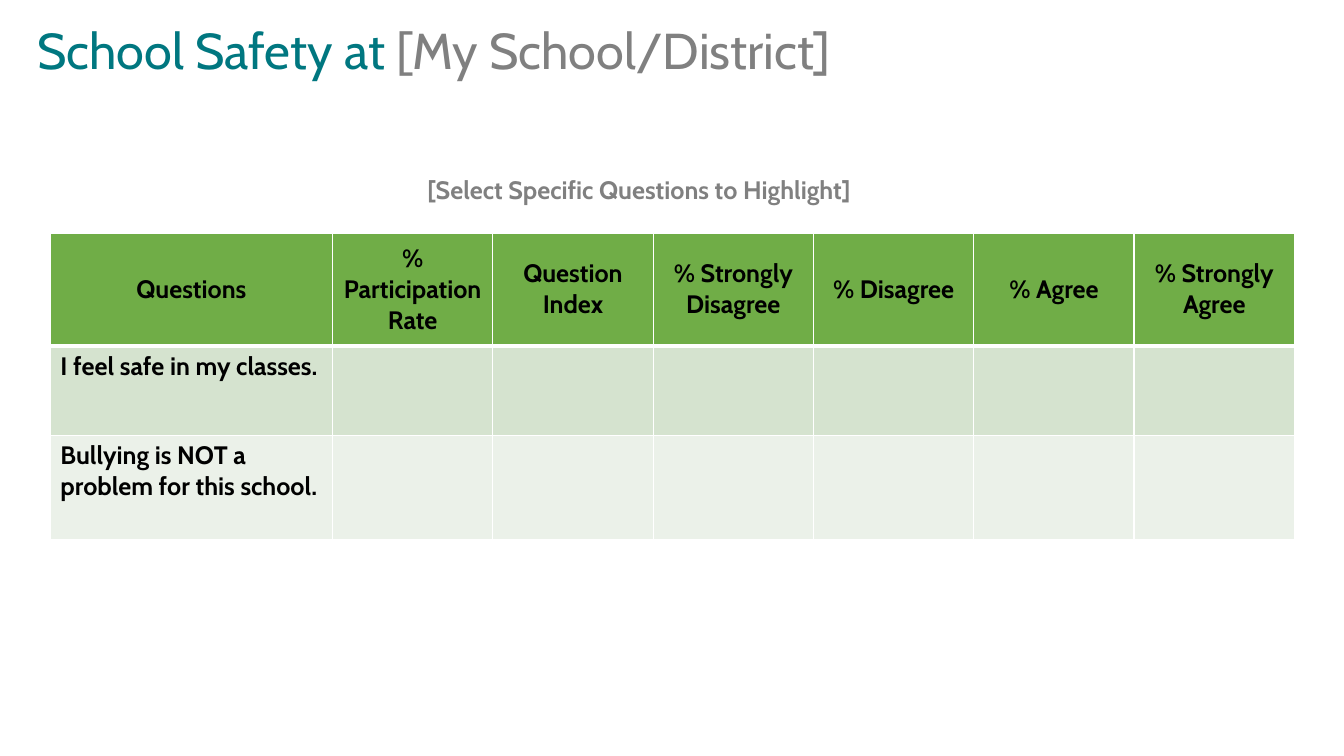
from lxml.etree import SubElement
from pptx import Presentation
from pptx.dml.color import RGBColor
from pptx.enum.text import MSO_ANCHOR, PP_ALIGN
from pptx.oxml.ns import qn
from pptx.util import Cm, Pt

COLORS = {
    "teal": "007780",
    "gray": "808080",
    "black": "000000",
    "white": "FFFFFF",
    "header": "70AD47",
    "band_dark": "D5E3CF",
    "band_light": "EBF1E9",
}
TITLE_FONT = {"name": "Cabin", "size": Pt(36)}
BOLD_FONT = {"name": "Cabin", "size": Pt(18), "bold": True}

HEADINGS = [
    "Questions", "% Participation Rate", "Question Index", "% Strongly Disagree",
    "% Disagree", "% Agree", "% Strongly Agree",
]
QUESTIONS = ["I feel safe in my classes.", "Bullying is NOT a problem for this school."]
ROW_HEIGHTS = [2.84, 2.26, 2.62]
ROW_FILLS = ["header", "band_dark", "band_light"]
QUESTION_WIDTH, RESULT_WIDTH = 7.11, 4.04


def set_attributes(target, values):
    for name, value in values.items():
        setattr(target, name, value)


def add_run(paragraph, text, font_values, color):
    run = paragraph.add_run()
    run.text = text
    set_attributes(run.font, font_values)
    run.font.color.rgb = RGBColor.from_string(COLORS[color])


def add_text(slide, box, parts, font_values, frame_values, line_spacing=1.0):
    """Add a one-paragraph text box; parts are (text, color) pairs."""
    shape = slide.shapes.add_textbox(*(Cm(length) for length in box))
    set_attributes(shape.text_frame, {"word_wrap": True, **frame_values})
    paragraph = shape.text_frame.paragraphs[0]
    paragraph.line_spacing = line_spacing
    for text, color in parts:
        add_run(paragraph, text, font_values, color)


def set_borders(cell, widths):
    """Draw white borders; widths maps left, right, top and bottom to points."""
    properties = cell._tc.get_or_add_tcPr()
    for side in "LRTB":
        line = SubElement(properties, qn(f"a:ln{side}"), w=str(Pt(widths[side])))
        fill = SubElement(line, qn("a:solidFill"))
        SubElement(fill, qn("a:srgbClr"), val=COLORS["white"])


def format_cell(cell, row_index, text):
    # The line under the header row is thicker than the others
    set_borders(cell, {
        "L": 1, "R": 1,
        "T": 3 if row_index == 1 else 1,
        "B": 3 if row_index == 0 else 1,
    })
    cell.fill.solid()
    cell.fill.fore_color.rgb = RGBColor.from_string(COLORS[ROW_FILLS[row_index]])
    paragraph = cell.text_frame.paragraphs[0]
    if row_index == 0:
        cell.vertical_anchor = MSO_ANCHOR.MIDDLE
        paragraph.alignment = PP_ALIGN.CENTER
    if text:
        add_run(paragraph, text, BOLD_FONT, "black")


def add_question_table(slide, left, top):
    column_widths = [QUESTION_WIDTH] + [RESULT_WIDTH] * (len(HEADINGS) - 1)
    rows = [HEADINGS] + [[question] + [""] * (len(HEADINGS) - 1) for question in QUESTIONS]
    table = slide.shapes.add_table(
        len(rows), len(HEADINGS), Cm(left), Cm(top),
        Cm(sum(column_widths)), Cm(sum(ROW_HEIGHTS)),
    ).table
    for column, width in zip(table.columns, column_widths):
        column.width = Cm(width)
    for row_index, texts in enumerate(rows):
        table.rows[row_index].height = Cm(ROW_HEIGHTS[row_index])
        for column_index, text in enumerate(texts):
            format_cell(table.cell(row_index, column_index), row_index, text)


def main():
    presentation = Presentation()
    presentation.slide_width, presentation.slide_height = Cm(33.87), Cm(19.05)
    slide = presentation.slides.add_slide(presentation.slide_layouts[6])

    # Title
    add_text(
        slide, (0.05, 0, 33.83, 2.67),
        [("School Safety at ", "teal"), ("[My School/District]", "gray")],
        TITLE_FONT,
        {"vertical_anchor": MSO_ANCHOR.MIDDLE, "margin_left": Cm(0.89)},
        line_spacing=0.9,
    )

    # Table caption
    add_text(
        slide, (10.52, 4.27, 12.8, 1.02),
        [("[Select Specific Questions to Highlight]", "gray")],
        BOLD_FONT, {},
    )

    # Survey results
    add_question_table(slide, 1.27, 5.87)

    presentation.save("out.pptx")


if __name__ == "__main__":
    main()
